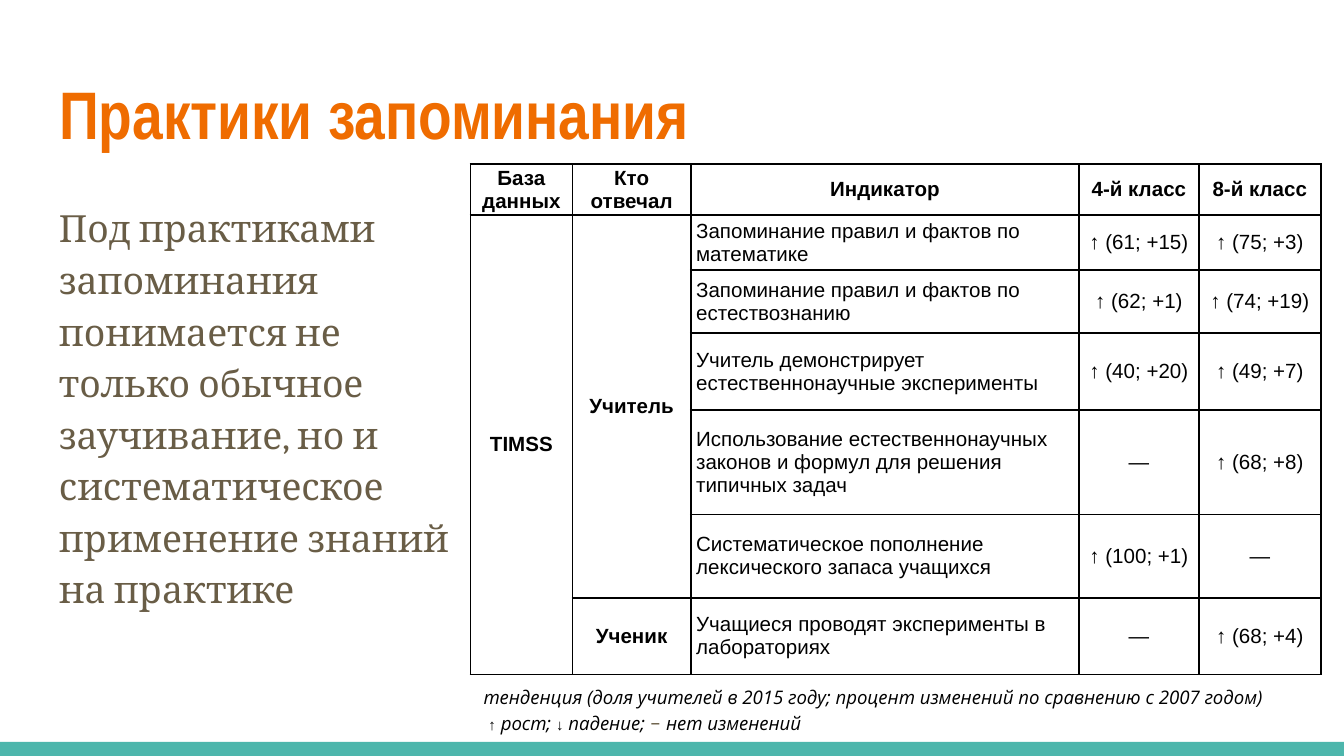
from lxml.etree import SubElement
from pptx import Presentation
from pptx.dml.color import RGBColor
from pptx.enum.shapes import MSO_SHAPE as Shape
from pptx.enum.text import MSO_ANCHOR as Anchor, PP_ALIGN as Align
from pptx.oxml.ns import qn
from pptx.util import Inches, Pt

COLORS = {"title": "EF6C00", "body": "695D46", "bar": "4DB6AC", "black": "000000", "white": "FFFFFF"}

TITLE = "Практики запоминания"
DEFINITION = ("Под практиками запоминания понимается не только обычное заучивание, "
              "но и систематическое применение знаний на практике")
ROWS = [
    ("База данных", "Кто отвечал", "Индикатор", "4-й класс", "8-й класс"),
    ("TIMSS", "Учитель", "Запоминание правил и фактов по математике", "↑ (61; +15)", "↑ (75; +3)"),
    ("", "", "Запоминание правил и фактов по естествознанию", "↑ (62; +1)", "↑ (74; +19)"),
    ("", "", "Учитель демонстрирует естественнонаучные эксперименты", "↑ (40; +20)", "↑ (49; +7)"),
    ("", "", "Использование естественнонаучных законов и формул для решения типичных задач",
     "—", "↑ (68; +8)"),
    ("", "", "Систематическое пополнение лексического запаса учащихся", "↑ (100; +1)", "—"),
    ("", "Ученик", "Учащиеся проводят эксперименты в лабораториях", "—", "↑ (68; +4)"),
]
COLUMN_WIDTHS = [0.76, 0.88, 2.89, 0.89, 0.91]
ROW_HEIGHTS = [0.38, 0.41, 0.47, 0.57, 0.78, 0.62, 0.57]
MERGES = [((1, 0), (6, 0)), ((1, 1), (5, 1))]
INDICATOR_COLUMN = 2

WORDS = {"size": 10, "font": "Open Sans", "italic": True}
ARROW = {"size": 8, "font": "Arial"}
DASH = {"size": 12, "font": "Calibri", "color": "body"}
LEGEND = [
    [("тенденция (доля учителей в 2015 году; процент изменений по сравнению с 2007 годом)", WORDS)],
    [(" ", WORDS), ("↑", ARROW), (" рост; ", WORDS), ("↓", ARROW), (" падение; ", WORDS),
     ("– ", DASH), ("нет изменений", WORDS)],
]


def add_text(paragraph, text, size=11, font="Arial", color="black", bold=False, italic=False, align=Align.LEFT):
    """Append a formatted run to a paragraph."""
    paragraph.alignment = align
    run = paragraph.add_run()
    run.text = text
    run.font.size, run.font.name = Pt(size), font
    run.font.bold, run.font.italic = bold, italic
    run.font.color.rgb = RGBColor.from_string(COLORS[color])


def prepare_frame(frame):
    frame.word_wrap = True
    frame.vertical_anchor = Anchor.TOP
    frame.margin_left = frame.margin_right = frame.margin_top = frame.margin_bottom = Inches(0.1)
    return frame


def add_frame(slide, *box):
    return prepare_frame(slide.shapes.add_textbox(*map(Inches, box)).text_frame)


def style_cell(cell):
    cell.vertical_anchor = Anchor.MIDDLE
    cell.margin_left = cell.margin_right = Inches(0.04)
    cell.margin_top = cell.margin_bottom = 0
    properties = cell._tc.get_or_add_tcPr()
    for side in ("a:lnL", "a:lnR", "a:lnT", "a:lnB"):
        border = SubElement(properties, qn(side), w=str(Pt(1)))
        SubElement(SubElement(border, qn("a:solidFill")), qn("a:srgbClr"), val=COLORS["black"])
    cell.fill.solid()
    cell.fill.fore_color.rgb = RGBColor.from_string(COLORS["white"])


def add_indicators(slide):
    box = (3.5, 1.22, sum(COLUMN_WIDTHS), sum(ROW_HEIGHTS))
    table = slide.shapes.add_table(len(ROWS), len(COLUMN_WIDTHS), *map(Inches, box)).table
    for column, width in zip(table.columns, COLUMN_WIDTHS):
        column.width = Inches(width)
    for row, height in zip(table.rows, ROW_HEIGHTS):
        row.height = Inches(height)
    for r, row in enumerate(ROWS):
        for c, text in enumerate(row):
            cell = table.cell(r, c)
            style_cell(cell)
            if text:
                left = r > 0 and c == INDICATOR_COLUMN
                add_text(cell.text_frame.paragraphs[0], text, bold=r == 0 or c < INDICATOR_COLUMN,
                         align=Align.LEFT if left else Align.CENTER)
    for first, last in MERGES:
        table.cell(*first).merge(table.cell(*last))


def main():
    deck = Presentation()
    deck.slide_width = Inches(10)
    deck.slide_height = deck.slide_width * 9 // 16
    slide = deck.slides.add_slide(deck.slide_layouts[5])

    bar = slide.shapes.add_shape(Shape.RECTANGLE, *map(Inches, (0, 5.52, 10, 0.11)))
    bar.shadow.inherit = False
    bar.fill.solid()
    bar.fill.fore_color.rgb = RGBColor.from_string(COLORS["bar"])
    bar.line.fill.background()

    title = slide.shapes.title
    title.left, title.top, title.width, title.height = map(Inches, (0.34, 0.44, 9.32, 0.77))
    heading = prepare_frame(title.text_frame)
    add_text(heading.paragraphs[0], TITLE, size=36, font="Arial Narrow", color="title", bold=True)

    definition = add_frame(slide, 0.34, 1.38, 3.24, 3.61).paragraphs[0]
    definition.line_spacing = 1.15
    definition.space_before = definition.space_after = Pt(16)
    add_text(definition, DEFINITION, size=20, font="Cambria", color="body")

    add_indicators(slide)

    legend = add_frame(slide, 3.5, 5, 6.61, 0.55)
    for i, line in enumerate(LEGEND):
        paragraph = legend.add_paragraph() if i else legend.paragraphs[0]
        for text, style in line:
            add_text(paragraph, text, **style)

    deck.save("out.pptx")


if __name__ == "__main__":
    main()
